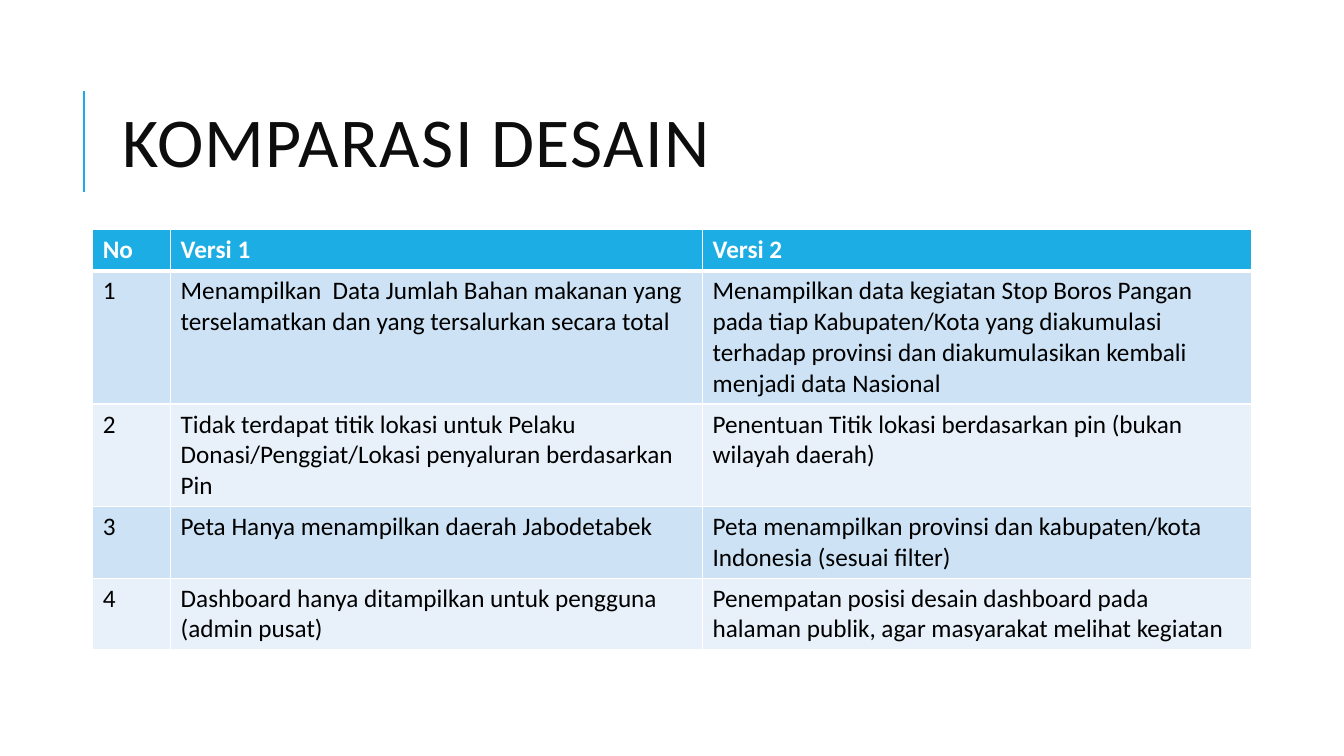
import pptx
import pptx.dml.color
import pptx.enum.shapes
import pptx.enum.text
import pptx.oxml
import pptx.oxml.ns
import pptx.util

Pt = pptx.util.Pt

HEADER = ("No", "Versi 1", "Versi 2")
COMPARISON = [
    ("Menampilkan  Data Jumlah Bahan makanan yang terselamatkan dan yang tersalurkan secara total",
     "Menampilkan data kegiatan Stop Boros Pangan pada tiap Kabupaten/Kota yang diakumulasi "
     "terhadap provinsi dan diakumulasikan kembali menjadi data Nasional"),
    ("Tidak terdapat titik lokasi untuk Pelaku Donasi/Penggiat/Lokasi penyaluran berdasarkan Pin",
     "Penentuan Titik lokasi berdasarkan pin (bukan wilayah daerah)"),
    ("Peta Hanya menampilkan daerah Jabodetabek",
     "Peta menampilkan provinsi dan kabupaten/kota Indonesia (sesuai filter)"),
    ("Dashboard hanya ditampilkan untuk pengguna (admin pusat)",
     "Penempatan posisi desain dashboard pada halaman publik, agar masyarakat melihat kegiatan"),
]
LINES_PER_ROW = (1, 4, 3, 2, 2)


def color(code):
    return pptx.dml.color.RGBColor.from_string(code)


class Page:
    font = "Calibri"
    accent = "1CADE4"
    bands = ("CDE3F5", "E8F1FA")

    def __init__(self, deck):
        self.shapes = deck.slides.add_slide(deck.slide_layouts[6]).shapes

    def add_span(self, para, text, size, ink, bold=False):
        span = para.add_run()
        span.text = text
        span.font.name = self.font
        span.font.size = Pt(size)
        span.font.bold = bold
        span.font.color.rgb = color(ink)
        return span

    def title(self, text, left, top, width, height):
        box = self.shapes.add_textbox(Pt(left), Pt(top), Pt(width), Pt(height))
        box.text_frame.word_wrap = True
        box.text_frame.vertical_anchor = pptx.enum.text.MSO_ANCHOR.MIDDLE
        para = box.text_frame.paragraphs[0]
        para.line_spacing = 0.8
        span = self.add_span(para, text, 50, "0D0D0D")
        span._r.get_or_add_rPr().set("spc", "100")

    def rule(self, x, top, bottom):
        line = self.shapes.add_connector(
            pptx.enum.shapes.MSO_CONNECTOR.STRAIGHT, Pt(x), Pt(bottom), Pt(x), Pt(top))
        line.line.color.rgb = color(self.accent)
        line.line.width = Pt(1.5)
        properties = line._element.spPr
        properties.append(pptx.oxml.parse_xml(
            "<a:effectLst %s/>" % pptx.oxml.ns.nsdecls("a")))

    def borders(self, cell, widths):
        """Draw white borders; widths are left, right, top, bottom."""
        properties = cell._tc.get_or_add_tcPr()
        for side, width in zip("LRTB", widths):
            properties.append(pptx.oxml.parse_xml(
                '<a:ln%s %s w="%d"><a:solidFill><a:srgbClr val="FFFFFF"/></a:solidFill></a:ln%s>'
                % (side, pptx.oxml.ns.nsdecls("a"), Pt(width), side)))

    def table(self, rows, line_counts, left, top, widths):
        heights = [22 * count + 7.2 for count in line_counts]
        table = self.shapes.add_table(
            len(rows), len(widths), Pt(left), Pt(top), Pt(sum(widths)), Pt(sum(heights))).table
        for column, width in zip(table.columns, widths):
            column.width = Pt(width)
        for index, (texts, height) in enumerate(zip(rows, heights)):
            table.rows[index].height = Pt(height)
            header = index == 0
            for cell, text in zip(table.rows[index].cells, texts):
                self.borders(cell, (1, 1, 3 if index == 1 else 1, 3 if header else 1))
                cell.fill.solid()
                cell.fill.fore_color.rgb = color(
                    self.accent if header else self.bands[(index - 1) % 2])
                self.add_span(cell.text_frame.paragraphs[0], text, 18,
                              "FFFFFF" if header else "000000", header)


def main():
    deck = pptx.Presentation()
    deck.slide_width, deck.slide_height = Pt(960), Pt(540)
    page = Page(deck)
    page.rule(60, 65, 137)
    page.title("KOMPARASI DESAIN", 80.5, 46, 765.5, 118)
    numbered = [(str(number), *texts) for number, texts in enumerate(COMPARISON, 1)]
    page.table([HEADER, *numbered], LINES_PER_ROW, 66.3, 164.2, (55.6, 380, 392))
    deck.save("out.pptx")


if __name__ == "__main__":
    main()
